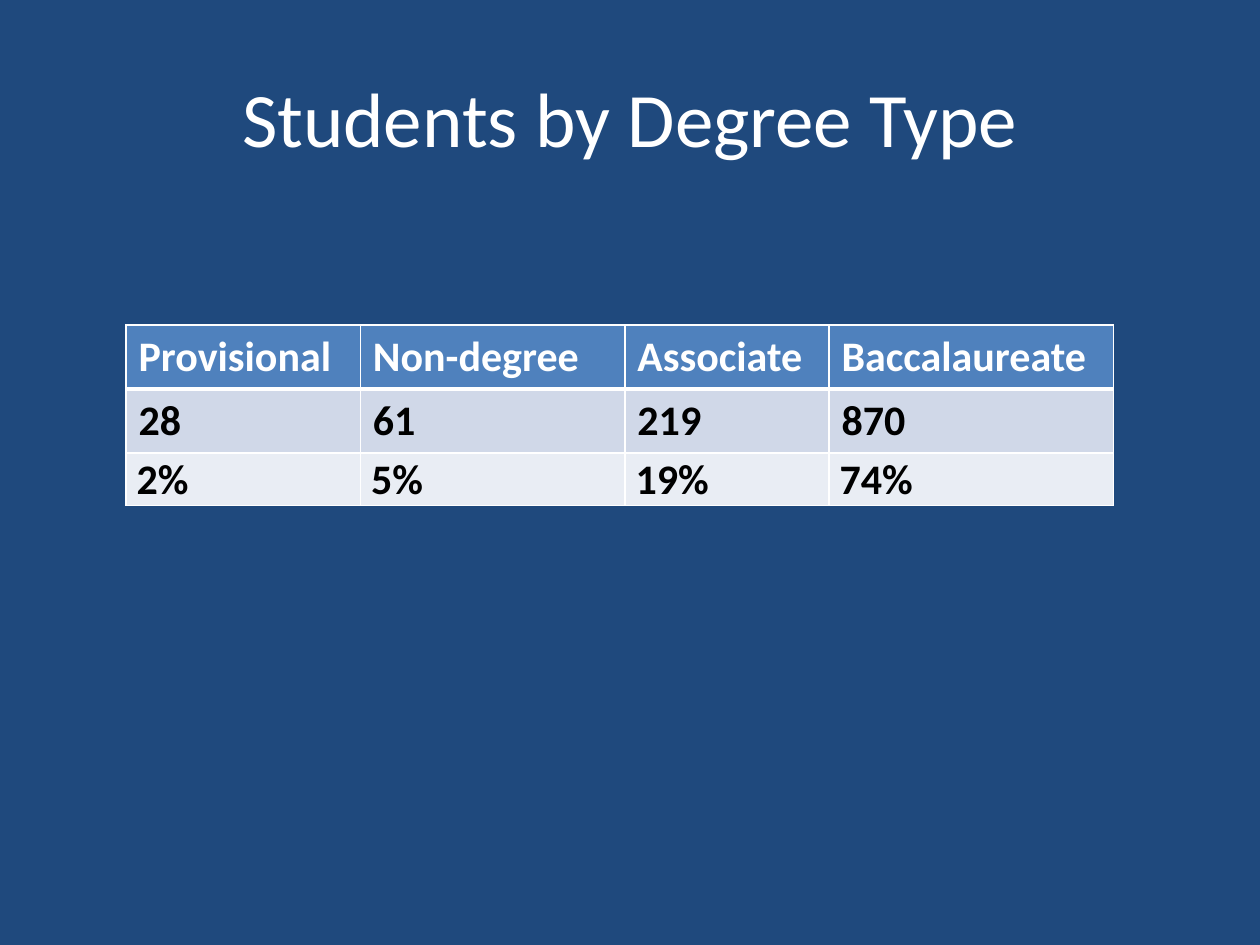
"""Build a slide with a table of students by degree type."""
from dataclasses import dataclass

from lxml import etree
from pptx import Presentation
from pptx.dml.color import RGBColor
from pptx.enum.text import MSO_ANCHOR, PP_ALIGN
from pptx.oxml.ns import qn
from pptx.util import Pt

TOP, MIDDLE, BOTTOM = MSO_ANCHOR.TOP, MSO_ANCHOR.MIDDLE, MSO_ANCHOR.BOTTOM
LEFT, CENTER = PP_ALIGN.LEFT, PP_ALIGN.CENTER
FONT = "Calibri"
COLORS = {
    "background": "1F497D",
    "white": "FFFFFF",
    "black": "000000",
    "header": "4F81BD",
    "counts": "D0D8E8",
    "shares": "E9EDF4",
}
COLUMN_WIDTHS = (133.92, 151.2, 116.64, 162.72)


@dataclass(frozen=True)
class RowSpec:
    """Contents and formatting of one table row."""

    texts: tuple[str, ...]
    fill: str
    color: str = "black"
    height: float = 36.5
    margins: tuple[float, float, float, float] = (7.2, 3.6, 7.2, 3.6)
    anchor: MSO_ANCHOR = TOP
    top_line: float = 1
    bottom_line: float = 1


ROWS = (
    RowSpec(("Provisional", "Non-degree", "Associate", "Baccalaureate"),
            "header", color="white", bottom_line=3),
    RowSpec(("28", "61", "219", "870"), "counts", top_line=3),
    RowSpec(("2%", "5%", "19%", "74%"), "shares", height=29.5,
            margins=(6.1, 0.72, 0.72, 0), anchor=BOTTOM),
)


def rgb(name: str) -> RGBColor:
    """Return a named palette color."""
    return RGBColor.from_string(COLORS[name])


def write_text(frame, text: str, size: float, color: str, bold: bool, align) -> None:
    """Add one formatted run to the first paragraph."""
    para = frame.paragraphs[0]
    para.alignment = align
    span = para.add_run()
    span.text = text
    span.font.name = FONT
    span.font.size = Pt(size)
    span.font.bold = bold
    span.font.color.rgb = rgb(color)


def add_border(cell, side: str, width: float) -> None:
    """Add a white border to one side of a cell."""
    properties = cell._tc.get_or_add_tcPr()
    line = etree.SubElement(properties, qn(f"a:ln{side}"), w=str(Pt(width)))
    fill = etree.SubElement(line, qn("a:solidFill"))
    etree.SubElement(fill, qn("a:srgbClr"), val=COLORS["white"])


def format_cell(cell, text: str, row: RowSpec) -> None:
    """Fill in a cell according to its row."""
    widths = {"L": 1, "R": 1, "T": row.top_line, "B": row.bottom_line}
    for side, width in widths.items():
        add_border(cell, side, width)
    cell.fill.solid()
    cell.fill.fore_color.rgb = rgb(row.fill)
    cell.margin_left, cell.margin_top, cell.margin_right, cell.margin_bottom = map(
        Pt, row.margins)
    cell.vertical_anchor = row.anchor
    write_text(cell.text_frame, text, 24, row.color, True, LEFT)


def add_title(page) -> None:
    """Place and write the slide title."""
    title = page.shapes.title
    title.left, title.top, title.width, title.height = map(Pt, (36, 21.6, 648, 90))
    title.text_frame.vertical_anchor = MIDDLE
    write_text(title.text_frame, "Students by Degree Type", 44, "white", False, CENTER)


def add_degree_table(page) -> None:
    """Draw the table of student counts and shares."""
    height = sum(row.height for row in ROWS)
    table = page.shapes.add_table(
        len(ROWS), len(COLUMN_WIDTHS), Pt(72), Pt(185.76),
        Pt(sum(COLUMN_WIDTHS)), Pt(height)).table
    for column, width in zip(table.columns, COLUMN_WIDTHS):
        column.width = Pt(width)
    for table_row, row in zip(table.rows, ROWS):
        table_row.height = Pt(row.height)
        for cell, text in zip(table_row.cells, row.texts):
            format_cell(cell, text, row)


def main() -> None:
    """Build and save the deck."""
    deck = Presentation()
    deck.slide_width, deck.slide_height = Pt(720), Pt(540)
    page = deck.slides.add_slide(deck.slide_layouts.get_by_name("Title Only"))
    page.background.fill.solid()
    page.background.fill.fore_color.rgb = rgb("background")
    add_title(page)
    add_degree_table(page)
    deck.save("out.pptx")


if __name__ == "__main__":
    main()
